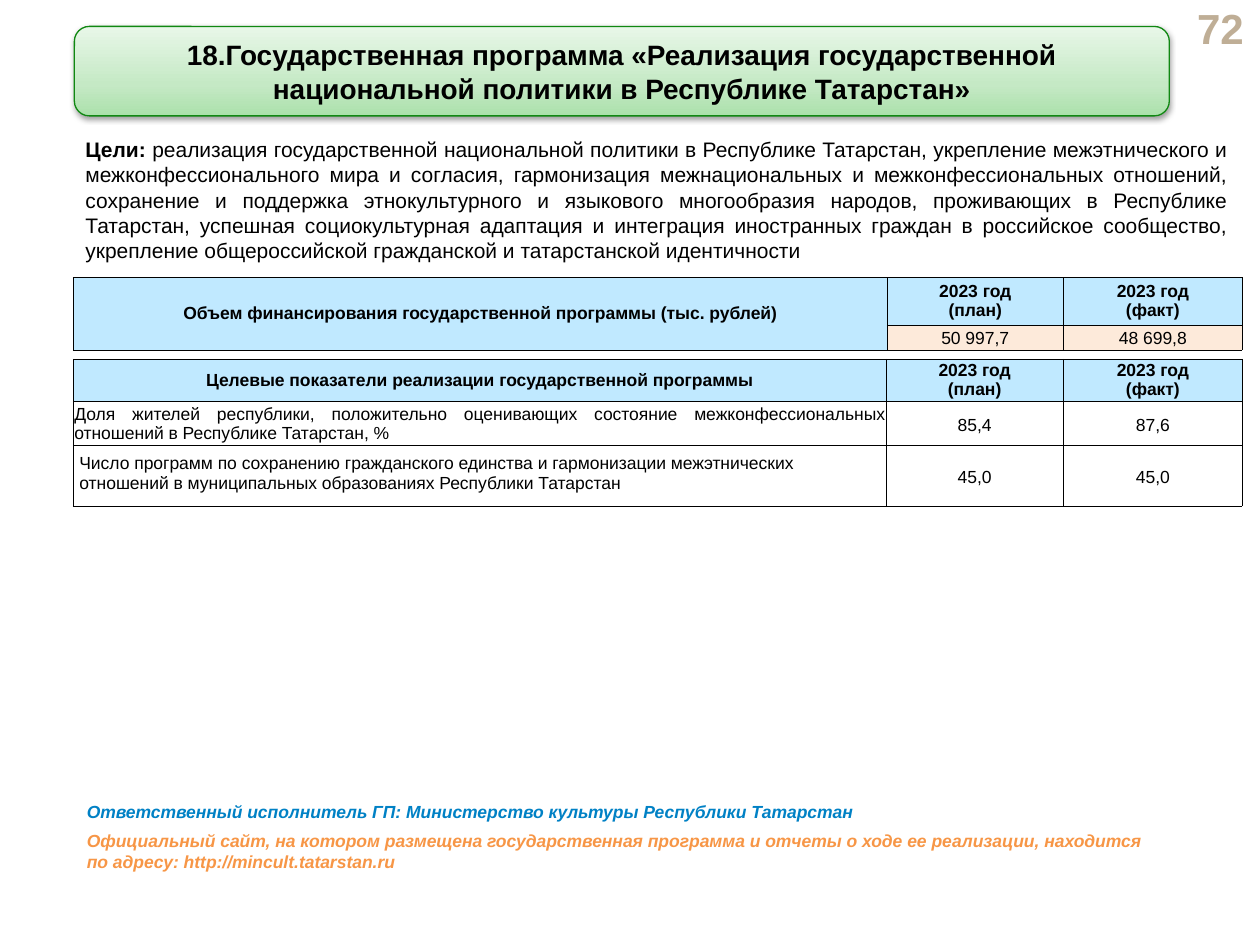
from dataclasses import dataclass
from typing import Optional

from lxml import etree
from pptx import Presentation
from pptx.dml.color import RGBColor
from pptx.enum.shapes import MSO_SHAPE
from pptx.enum.text import MSO_ANCHOR, PP_ALIGN
from pptx.oxml import parse_xml
from pptx.oxml.ns import nsdecls, qn
from pptx.util import Inches, Pt

ROUNDED = MSO_SHAPE.ROUNDED_RECTANGLE
TOP, MIDDLE = MSO_ANCHOR.TOP, MSO_ANCHOR.MIDDLE
LEFT, CENTER = PP_ALIGN.LEFT, PP_ALIGN.CENTER
RIGHT, JUSTIFY = PP_ALIGN.RIGHT, PP_ALIGN.JUSTIFY
BLACK, HEADER_BLUE, AMOUNT_PEACH = "000000", "C0E9FF", "FDEADA"
HEADER_MARGINS = (0.06, 0, 0.06, 0)
TIGHT_MARGINS = (0.01, 0.01, 0.01, 0)


@dataclass
class Run:
    text: str
    size: float = 10
    color: str = BLACK
    bold: bool = False
    italic: bool = False


@dataclass
class Cell:
    lines: list[str]
    fill: Optional[str] = None
    bold: bool = False
    align: PP_ALIGN = CENTER
    anchor: MSO_ANCHOR = MIDDLE
    margins: tuple = TIGHT_MARGINS
    spacing: float = 1.0


def rgb(color: str) -> RGBColor:
    return RGBColor.from_string(color)


def write(frame, paragraphs: list[list[Run]], align: PP_ALIGN, spacing: float = 1.0) -> None:
    for index, runs in enumerate(paragraphs):
        paragraph = frame.add_paragraph() if index else frame.paragraphs[0]
        paragraph.alignment = align
        paragraph.line_spacing = spacing
        for item in runs:
            run = paragraph.add_run()
            run.text = item.text
            font = run.font
            font.name, font.size = "Arial", Pt(item.size)
            font.bold, font.italic = item.bold, item.italic
            font.color.rgb = rgb(item.color)


def add_text(slide, box: tuple, runs: list[Run], align: PP_ALIGN = LEFT,
             anchor: MSO_ANCHOR = TOP) -> None:
    frame = slide.shapes.add_textbox(*map(Inches, box)).text_frame
    frame.word_wrap = True
    frame.vertical_anchor = anchor
    write(frame, [runs], align)


def add_title(slide, box: tuple, text: str) -> None:
    banner = slide.shapes.add_shape(ROUNDED, *map(Inches, box))
    banner.line.color.rgb = rgb("108812")
    banner.line.width = Pt(0.75)
    banner.shadow.inherit = False
    properties = banner.fill._xPr
    stops = "".join(
        f'<a:gs pos="{position * 1000}"><a:srgbClr val="{color}"/></a:gs>'
        for position, color in ((0, "ABE1AB"), (35, "C5E9C5"), (100, "E8F7E8")))
    gradient = parse_xml(f'<a:gradFill {nsdecls("a")}><a:gsLst>{stops}</a:gsLst>'
                         '<a:lin ang="16200000" scaled="0"/></a:gradFill>')
    properties.find(qn("a:prstGeom")).addnext(gradient)
    properties.find(qn("a:effectLst")).append(parse_xml(
        f'<a:outerShdw {nsdecls("a")} blurRad="40000" dist="20000" dir="5400000" '
        'rotWithShape="0"><a:srgbClr val="000000"><a:alpha val="38000"/>'
        '</a:srgbClr></a:outerShdw>'))
    banner.text_frame.word_wrap = True
    write(banner.text_frame, [[Run(text, 16, bold=True)]], CENTER)


def add_borders(cell) -> None:
    properties = cell._tc.get_or_add_tcPr()
    for index, side in enumerate(("lnL", "lnR", "lnT", "lnB")):
        line = etree.Element(qn(f"a:{side}"), w=str(Pt(0.25)))
        fill = etree.SubElement(line, qn("a:solidFill"))
        etree.SubElement(fill, qn("a:srgbClr"), val=BLACK)
        properties.insert(index, line)


def fill_cell(cell, content: Cell) -> None:
    if content.fill:
        cell.fill.solid()
        cell.fill.fore_color.rgb = rgb(content.fill)
    else:
        cell.fill.background()
    cell.vertical_anchor = content.anchor
    (cell.margin_left, cell.margin_top,
     cell.margin_right, cell.margin_bottom) = map(Inches, content.margins)
    write(cell.text_frame, [[Run(line, bold=content.bold)] for line in content.lines],
          content.align, content.spacing)


def add_grid(slide, left: float, top: float, widths: list[float], heights: list[float],
             rows: list[list[Optional[Cell]]]):
    table = slide.shapes.add_table(len(rows), len(widths), Inches(left), Inches(top),
                                   Inches(sum(widths)), Inches(sum(heights))).table
    for column, width in zip(table.columns, widths):
        column.width = Inches(width)
    for row, height in zip(table.rows, heights):
        row.height = Inches(height)
    for r, contents in enumerate(rows):
        for c, content in enumerate(contents):
            if content:
                fill_cell(table.cell(r, c), content)
            add_borders(table.cell(r, c))
    return table


def header_row(subject: str) -> list[Cell]:
    return [Cell(lines, HEADER_BLUE, True, margins=HEADER_MARGINS)
            for lines in ([subject], ["2023 год", "(план)"], ["2023 год", "(факт)"])]


def values(*numbers: str, fill: Optional[str] = None, spacing: float = 1.15) -> list[Cell]:
    return [Cell([number], fill, spacing=spacing) for number in numbers]


def main() -> None:
    deck = Presentation()
    deck.slide_width, deck.slide_height = Inches(10), Inches(7.5)
    slide = deck.slides.add_slide(deck.slide_layouts[6])

    # Page number and title
    add_text(slide, (9.33, 0.05, 0.64, 0.34), [Run("72", 24, "BFAE96", True)], RIGHT, MIDDLE)
    add_title(slide, (0.59, 0.21, 8.69, 0.71),
              "18.Государственная программа «Реализация государственной "
              "национальной политики в Республике Татарстан»")

    # Goals
    add_text(slide, (0.58, 1.03, 9.27, 1.11), [
        Run("Цели: ", 12, bold=True),
        Run("реализация государственной национальной политики в Республике Татарстан, "
            "укрепление межэтнического и межконфессионального мира и согласия, "
            "гармонизация межнациональных и межконфессиональных отношений, сохранение и "
            "поддержка этнокультурного и языкового многообразия народов, проживающих в "
            "Республике Татарстан, успешная социокультурная адаптация и интеграция "
            "иностранных граждан в российское сообщество, укрепление общероссийской "
            "гражданской и татарстанской идентичности", 12)], JUSTIFY, MIDDLE)

    # Financing
    financing = add_grid(slide, 0.58, 2.2, [6.46, 1.4, 1.42], [0.38, 0.2], [
        header_row("Объем финансирования государственной программы (тыс. рублей)"),
        [None, *values("50 997,7", "48 699,8", fill=AMOUNT_PEACH, spacing=1.0)]])
    financing.cell(0, 0).merge(financing.cell(1, 0))

    # Target indicators
    add_grid(slide, 0.58, 2.85, [6.45, 1.41, 1.42], [0.33, 0.35, 0.48], [
        header_row("Целевые показатели реализации государственной программы"),
        [Cell(["Доля жителей республики, положительно оценивающих состояние "
               "межконфессиональных отношений в Республике Татарстан, %"], align=JUSTIFY),
         *values("85,4", "87,6")],
        [Cell(["Число программ по сохранению гражданского единства и гармонизации "
               "межэтнических отношений в муниципальных образованиях Республики Татарстан"],
              align=LEFT, anchor=TOP, margins=(0.05, 0.07, 0.05, 0.07)),
         *values("45,0", "45,0")]])

    # Responsible body and website
    add_text(slide, (0.59, 6.31, 9.52, 0.27), [
        Run("Ответственный исполнитель ГП: Министерство культуры Республики Татарстан",
            color="0081C5", bold=True, italic=True)])
    add_text(slide, (0.59, 6.54, 8.59, 0.43), [
        Run("Официальный сайт, на котором размещена государственная программа и отчеты "
            "о ходе ее реализации, находится по адресу: http://mincult.tatarstan.ru",
            color="F79646", bold=True, italic=True)])

    deck.save("out.pptx")


if __name__ == "__main__":
    main()
